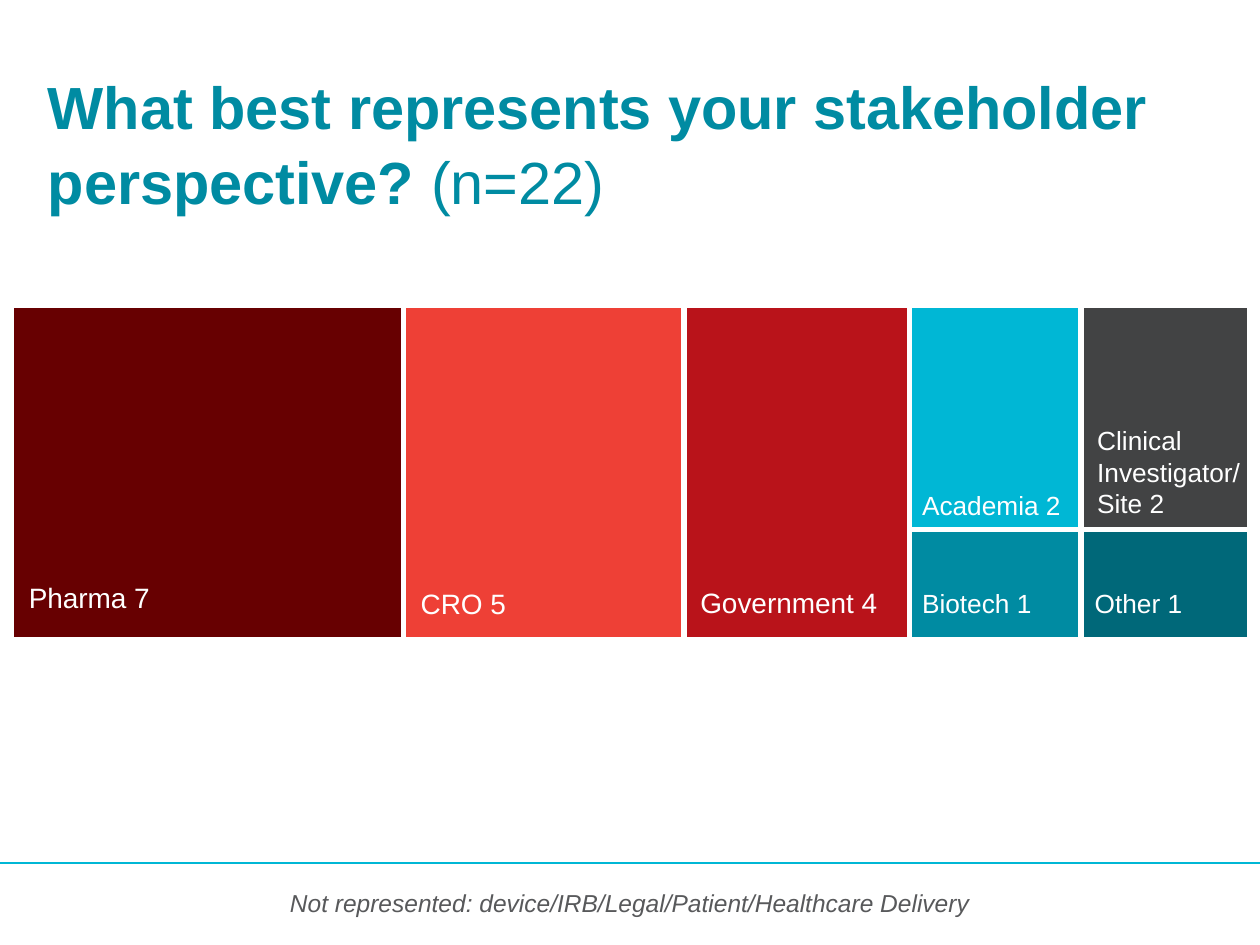
from dataclasses import dataclass
from itertools import accumulate

from lxml.etree import SubElement
from pptx import Presentation
from pptx.dml.color import RGBColor
from pptx.enum.shapes import MSO_CONNECTOR, MSO_SHAPE
from pptx.enum.text import MSO_ANCHOR, MSO_AUTO_SIZE, PP_ALIGN
from pptx.oxml.ns import qn
from pptx.util import Inches, Pt


@dataclass(frozen=True)
class Theme:
    font: str = "Arial"
    white: str = "FFFFFF"
    teal: str = "008BA2"
    cyan: str = "00B7D5"
    gray: str = "58595B"
    maroon: str = "670001"
    coral: str = "EE4036"
    red: str = "B9131A"
    dark: str = "424344"
    deep: str = "006879"
    head: int = 34
    large: int = 16
    small: int = 15
    note: int = 14


THEME = Theme()

# Each column: width, then its tiles from top to bottom.
# Each tile: height, fill, label, type size, label box relative to the tile.
COLUMNS = [
    (3.11, [(2.66, THEME.maroon, "Pharma 7", THEME.large, (0.04, 2.14, 1.91, 0.37))]),
    (2.23, [(2.66, THEME.coral, "CRO 5", THEME.large, (0.04, 2.19, 1.91, 0.37))]),
    (1.79, [(2.66, THEME.red, "Government 4", THEME.large, (0.03, 2.18, 1.91, 0.37))]),
    (1.36, [(1.78, THEME.cyan, "Academia 2", THEME.small, (0, 1.41, 1.46, 0.35)),
            (0.88, THEME.teal, "Biotech 1", THEME.small, (0, 0.41, 1.16, 0.35))]),
    (1.34, [(1.78, THEME.dark, "Clinical Investigator/Site 2", THEME.small,
             (0.03, 0.9, 1.46, 0.86)),
            (0.88, THEME.deep, "Other 1", THEME.small, (0.01, 0.41, 1.16, 0.35))]),
]


def color(code):
    return RGBColor.from_string(code)


def style(run, size, code, bold=False, italic=False):
    font = run.font
    font.name, font.size = THEME.font, Pt(size)
    font.bold, font.italic = bold, italic
    font.color.rgb = color(code)


def add_rect(shapes, box, fill):
    rect = shapes.add_shape(MSO_SHAPE.RECTANGLE, *map(Inches, box))
    rect.shadow.inherit = False
    rect.fill.solid()
    rect.fill.fore_color.rgb = color(fill)
    rect.line.fill.background()
    return rect


def add_label(shapes, box, text, size, code, align=PP_ALIGN.LEFT, italic=False):
    frame = shapes.add_textbox(*map(Inches, box)).text_frame
    frame.word_wrap = True
    frame.auto_size = MSO_AUTO_SIZE.SHAPE_TO_FIT_TEXT
    frame.text = text
    para = frame.paragraphs[0]
    para.alignment = align
    style(para.runs[0], size, code, italic=italic)


def set_title(slide, box):
    title = slide.shapes.title
    title.left, title.top, title.width, title.height = map(Inches, box)
    frame = title.text_frame
    frame.margin_left = frame.margin_right = 0
    frame.margin_top = frame.margin_bottom = 0
    frame.vertical_anchor = MSO_ANCHOR.MIDDLE
    frame.auto_size = MSO_AUTO_SIZE.NONE
    frame.word_wrap = True
    para = frame.paragraphs[0]
    para.alignment = PP_ALIGN.LEFT
    para.line_spacing = 1.04
    for text, bold in (("What best represents your stakeholder perspective? ", True),
                       ("(n=22)", False)):
        run = para.add_run()
        run.text = text
        style(run, THEME.head, THEME.teal, bold=bold)


def add_footer(slide, box):
    left, top, width, height = box
    shapes = slide.shapes
    add_rect(shapes, box, THEME.white)
    y = Inches(top + 0.02)
    rule = shapes.add_connector(MSO_CONNECTOR.STRAIGHT,
                                Inches(left), y, Inches(left + width), y)
    rule.line.color.rgb = color(THEME.cyan)
    rule.line.width = Pt(0.75)
    SubElement(rule.element.spPr, qn("a:effectLst"))
    add_label(shapes, (left + 1.05, top + 0.17, width - 2.1, 0.34),
              "Not represented: device/IRB/Legal/Patient/Healthcare Delivery",
              THEME.note, THEME.gray, PP_ALIGN.CENTER, italic=True)


def add_treemap(slide, left, top):
    """Draw the tiles column by column, then the labels above them."""
    shapes = slide.shapes.add_group_shape().shapes
    labels = []
    lefts = accumulate((width for width, _ in COLUMNS), initial=left)
    for x, (width, tiles) in zip(lefts, COLUMNS):
        y = top
        for height, fill, text, size, (dx, dy, w, h) in tiles:
            tile = add_rect(shapes, (x, y, width, height), fill)
            tile.line.color.rgb = color(THEME.white)
            tile.line.width = Pt(3)
            labels.append(((x + dx, y + dy, w, h), text, size))
            y += height
    for box, text, size in labels:
        add_label(shapes, box, text, size, THEME.white)


def main():
    deck = Presentation()
    deck.slide_width, deck.slide_height = Inches(10), Inches(7.5)
    slide = deck.slides.add_slide(deck.slide_layouts[5])
    set_title(slide, (0.38, 0.5, 9.25, 1.25))
    add_footer(slide, (0, 6.83, 10, 0.67))
    add_treemap(slide, 0.09, 2.42)
    deck.save("out.pptx")


if __name__ == "__main__":
    main()
